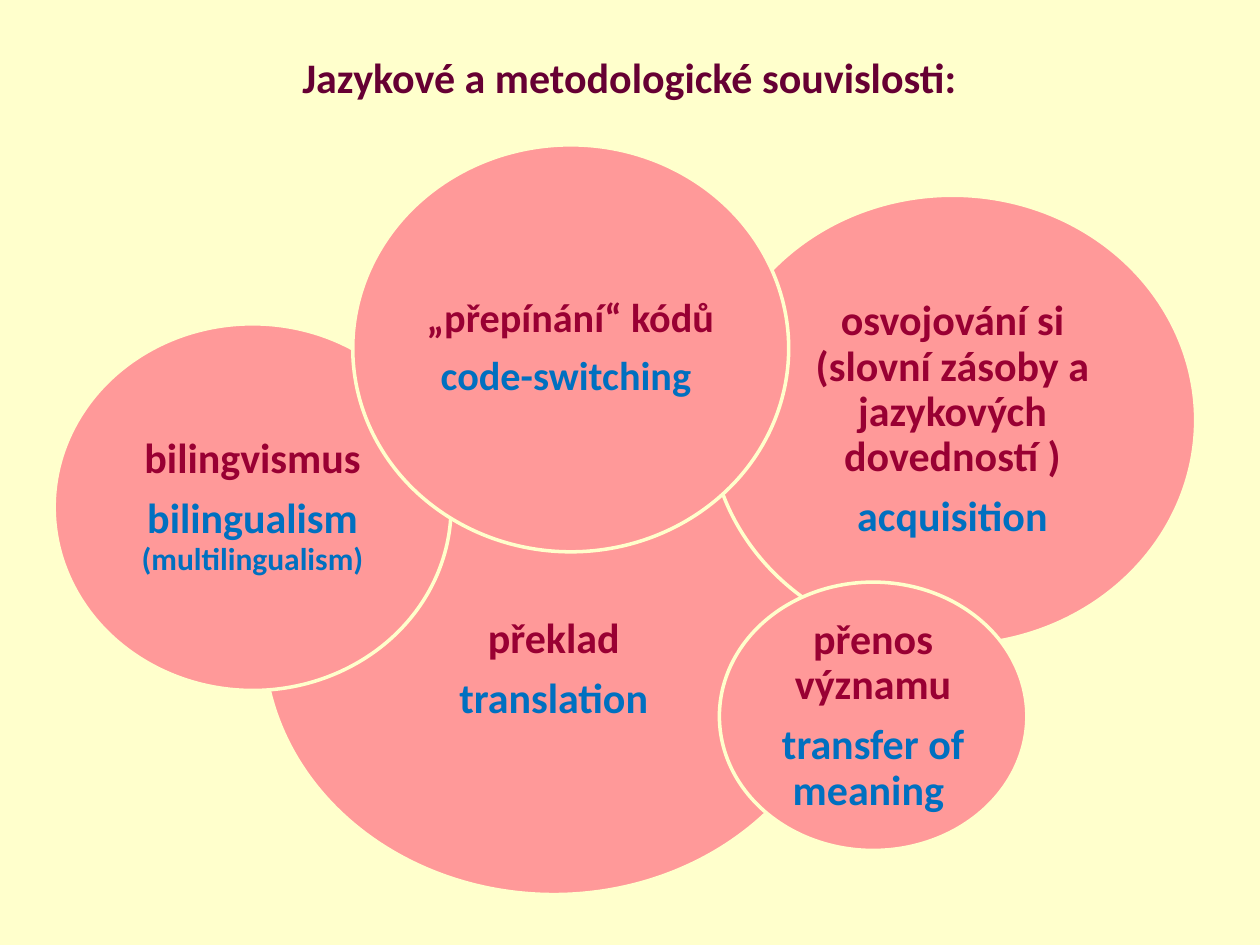
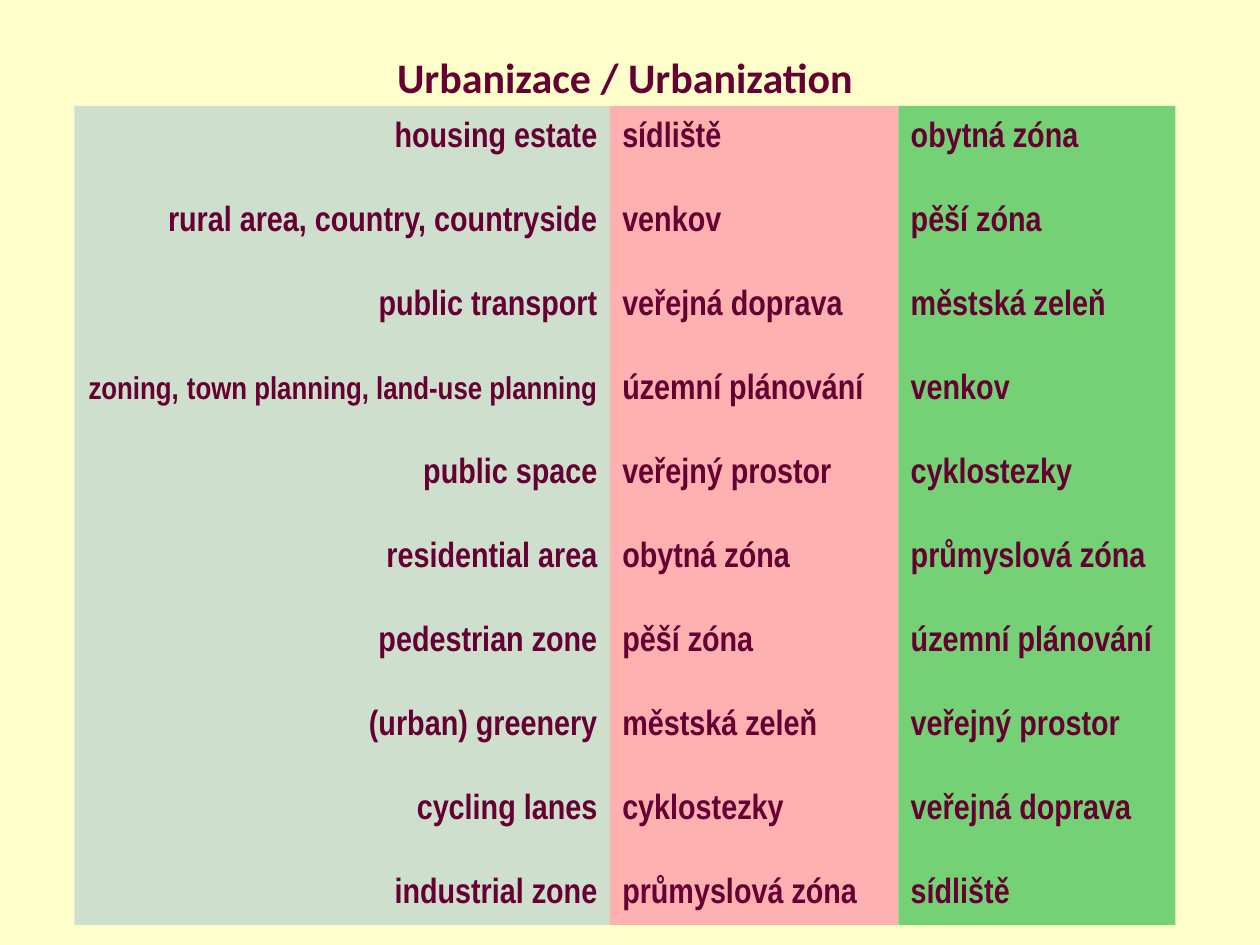
"""Build two slides: language topics as overlapping ovals, and an urbanization word list."""
from pptx import Presentation
from pptx import util as u
from pptx.dml.color import RGBColor
from pptx.enum import shapes, text

CREAM = RGBColor(0xFF, 0xFF, 0xCC)
WINE = RGBColor(0x66, 0x00, 0x33)
RED = RGBColor(0x99, 0x00, 0x33)
BLUE = RGBColor(0x00, 0x70, 0xC0)
ROSE = RGBColor(0xFF, 0x99, 0x99)
SAGE = RGBColor(0xCE, 0xDF, 0xCE)
PINK = RGBColor(0xFF, 0xB0, 0xB0)
GREEN = RGBColor(0x75, 0xD1, 0x75)


def add_run(par, words, size, color, font="Calibri"):
    run = par.add_run()
    run.text = words
    run.font.size = u.Pt(size)
    run.font.name = font
    run.font.bold = True
    run.font.color.rgb = color


def add_page(words, left, width):
    page = deck.slides.add_slide(deck.slide_layouts[5])
    title = page.shapes.title
    title.left, title.top = u.Inches(left), u.Inches(0.36)
    title.width, title.height = u.Inches(width), u.Inches(0.5)
    frame = title.text_frame
    frame.auto_size = text.MSO_AUTO_SIZE.NONE
    frame.vertical_anchor = text.MSO_ANCHOR.TOP
    par = frame.paragraphs[0]
    par.alignment = text.PP_ALIGN.CENTER
    add_run(par, words, 24, WINE)
    return page


deck = Presentation()
deck.slide_width, deck.slide_height = u.Inches(10), u.Inches(7.5)
fill = deck.slide_master.background.fill
fill.solid()
fill.fore_color.rgb = CREAM

page = add_page("Jazykové a metodologické souvislosti:", 0.98, 8.03)
ovals = [
    (2.09, 3.04, 4.61, 4.06, 0.17, 0.65, 24, "překlad", [("translation", 24)]),
    (0.43, 2.57, 3.15, 2.91, 0.11, 0.13, 24, "bilingvismus",
     [("bilingualism ", 24), ("(multilingualism)", 18)]),
    (5.63, 1.55, 3.86, 3.57, 0.11, 0.1, 24,
     "osvojování si (slovní zásoby a jazykových dovedností )", [("acquisition", 24)]),
    (5.71, 4.62, 2.44, 2.13, 0.13, 0.15, 24, "přenos významu",
     [("transfer of meaning ", 24)]),
    (2.8, 1.15, 3.46, 3.23, 0.05, 0.05, 23, "„přepínání“ kódů ",
     [("code-switching ", 23)]),
]
for left, top, width, height, side, head, size, czech, english in ovals:
    oval = page.shapes.add_shape(
        shapes.MSO_SHAPE.OVAL,
        u.Inches(left), u.Inches(top), u.Inches(width), u.Inches(height))
    oval.shadow.inherit = False
    oval.fill.solid()
    oval.fill.fore_color.rgb = ROSE
    oval.line.color.rgb = CREAM
    oval.line.width = u.Pt(2)
    frame = oval.text_frame
    frame.word_wrap = True
    frame.vertical_anchor = text.MSO_ANCHOR.MIDDLE
    frame.margin_left = frame.margin_right = u.Inches(side)
    frame.margin_top = u.Inches(head)
    frame.margin_bottom = u.Inches(min(head, 0.15))
    first, second = frame.paragraphs[0], frame.add_paragraph()
    for par in (first, second):
        par.alignment = text.PP_ALIGN.CENTER
        par.line_spacing = 0.9
        par.space_after = u.Pt(0.35 * size)
    add_run(first, czech, size, RED)
    for words, points in english:
        add_run(second, words, points, BLUE)

page = add_page("Urbanizace / Urbanization", 0.59, 8.74)
lists = [
    (4.25, SAGE, text.PP_ALIGN.RIGHT,
     ["housing estate", "rural area, country, countryside", "public transport",
      "zoning, town planning, land-use planning", "public space",
      "residential area", "pedestrian zone", "(urban) greenery",
      "cycling lanes", "industrial zone"]),
    (2.29, PINK, text.PP_ALIGN.LEFT,
     ["sídliště", "venkov", "veřejná doprava", "územní plánování",
      "veřejný prostor", "obytná zóna", "pěší zóna", "městská zeleň",
      "cyklostezky", "průmyslová zóna"]),
    (2.2, GREEN, text.PP_ALIGN.LEFT,
     ["obytná zóna", "pěší zóna", "městská zeleň", "venkov", "cyklostezky",
      "průmyslová zóna", "územní plánování", "veřejný prostor",
      "veřejná doprava", "sídliště"]),
]
left = 0.59
for width, color, align, terms in lists:
    box = page.shapes.add_shape(
        shapes.MSO_SHAPE.RECTANGLE,
        u.Inches(left), u.Inches(0.84), u.Inches(width), u.Inches(6.5))
    left += width
    box.shadow.inherit = False
    box.fill.solid()
    box.fill.fore_color.rgb = color
    box.line.fill.background()
    frame = box.text_frame
    frame.word_wrap = True
    frame.vertical_anchor = text.MSO_ANCHOR.TOP
    for row, term in enumerate(terms):
        par = frame.add_paragraph() if row else frame.paragraphs[0]
        par.alignment = align
        par.space_before = u.Pt(24 if row else 0)
        if term.startswith("zoning"):
            start, rest = term.split(" ", 1)
            for words, size in ((start, 18), (" ", 20), (rest, 18)):
                add_run(par, words, size, WINE, "Arial Narrow")
        else:
            add_run(par, term, 20, WINE, "Arial Narrow")

deck.save("out.pptx")
